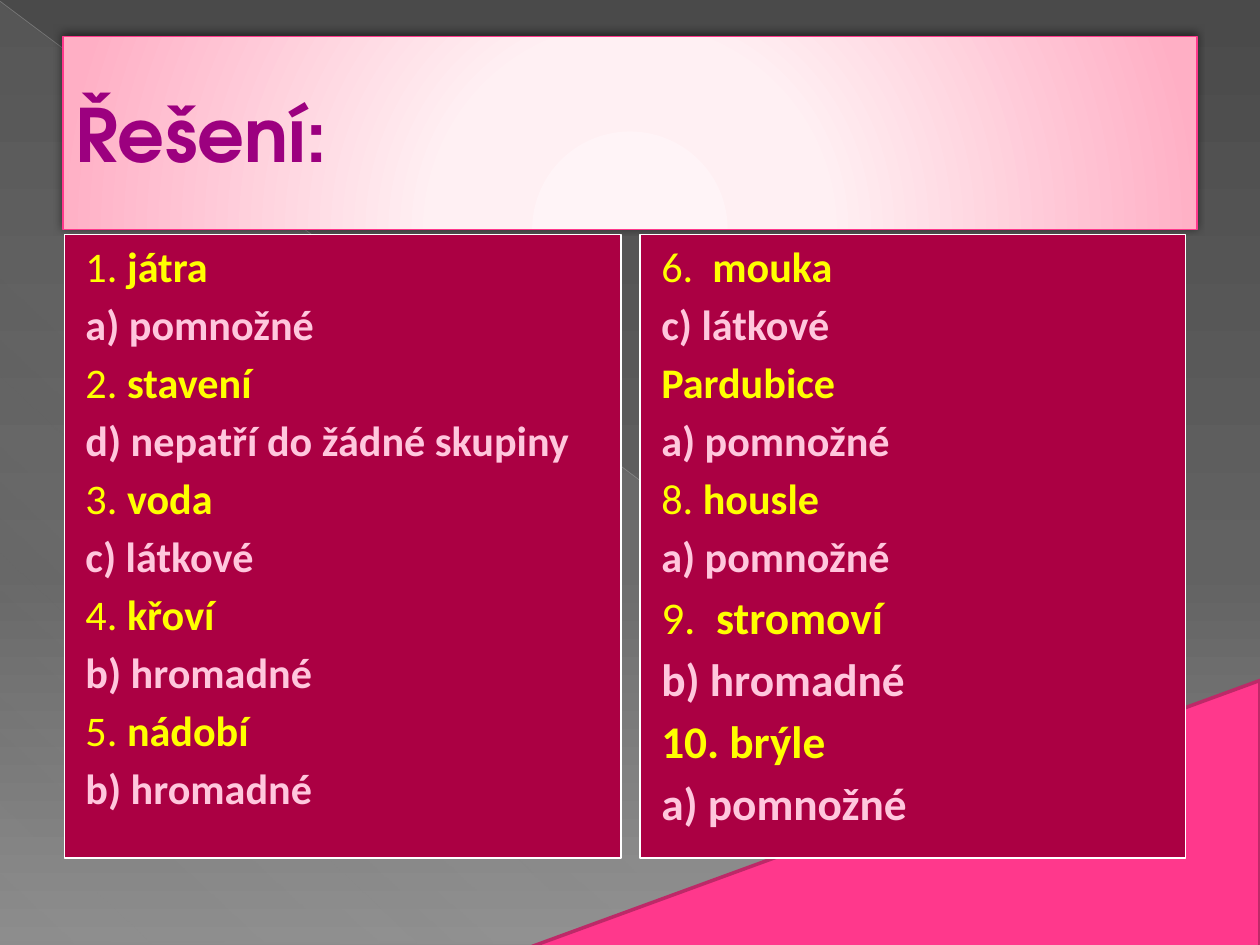
from lxml import etree
from pptx import Presentation
from pptx.dml.color import RGBColor
from pptx.enum.shapes import MSO_CONNECTOR, MSO_SHAPE
from pptx.enum.text import MSO_ANCHOR, PP_ALIGN
from pptx.oxml.ns import qn
from pptx.util import Inches, Pt

RECT, TRIANGLE = MSO_SHAPE.RECTANGLE, MSO_SHAPE.RIGHT_TRIANGLE
STRAIGHT = MSO_CONNECTOR.STRAIGHT
TOP, MIDDLE, LEFT = MSO_ANCHOR.TOP, MSO_ANCHOR.MIDDLE, PP_ALIGN.LEFT

COLORS = {
    "pink": "FF388C", "pink_edge": "BD2968", "panel": "AB0043", "white": "FFFFFF",
    "title": "9C007F", "word": "FFFF00", "answer": "FFC7DD", "ray": "BFBFBF",
    "sheen": "D2D2D2", "shadow": "000000",
}
BACKGROUND = [(0, "4A4A4A", 100), (60, "626262", 100), (100, "8C8C8C", 100)]
SHEEN = [(0, COLORS["sheen"], 10), (70, COLORS["sheen"], 8), (100, COLORS["sheen"], 1)]
TITLE_GLOW = [(0, "FFF4F7", 100), (34, "FFF0F3", 100), (100, "FFAFC5", 100)]
SMALL, LARGE = 24.1, 25.9

LEFT_ITEMS = [
    ("1. ", "játra", "a) pomnožné", SMALL),
    ("2. ", "stavení", "d) nepatří do žádné skupiny", SMALL),
    ("3. ", "voda", "c) látkové", SMALL),
    ("4. ", "křoví", "b) hromadné", SMALL),
    ("5. ", "nádobí", "b) hromadné", SMALL),
]
RIGHT_ITEMS = [
    ("6.", "  mouka", "c) látkové", SMALL),
    ("", "Pardubice", "a) pomnožné", SMALL),
    ("8. ", "housle", "a) pomnožné", SMALL),
    ("9.", "  stromoví", "b) hromadné", LARGE),
    ("", "10. brýle", "a) pomnožné", LARGE),
]


def rgb(name):
    """Return the named colour."""
    return RGBColor.from_string(COLORS[name])


def add_node(parent, tag, **attrs):
    """Append a DrawingML element with the given attributes."""
    node = etree.SubElement(parent, qn(f"a:{tag}"))
    for key, value in attrs.items():
        node.set(key, str(value))
    return node


def add_color(parent, color, alpha):
    """Append a colour with an opacity in percent."""
    node = add_node(parent, "srgbClr", val=color)
    if alpha < 100:
        add_node(node, "alpha", val=alpha * 1000)


def set_gradient(owner, fill, stops, angle=None, focus=None):
    """Fill with a linear gradient, or a circular one around a focus box."""
    fill.gradient()
    grad = owner.find(f".//{qn('a:gradFill')}")
    for child in list(grad):
        grad.remove(child)
    stop_list = add_node(grad, "gsLst")
    for pos, color, alpha in stops:
        add_color(add_node(stop_list, "gs", pos=pos * 1000), color, alpha)
    if focus:
        circle = add_node(grad, "path", path="circle")
        add_node(circle, "fillToRect", **{side: pct * 1000 for side, pct in zip("ltrb", focus)})
    else:
        add_node(grad, "lin", ang=angle * 60000, scaled=0)


def add_box(s, kind, box, fill=None, line=None, width=0.75):
    """Add a preset shape without shadow."""
    sp = s.shapes.add_shape(kind, *map(Inches, box))
    sp.shadow.inherit = False
    if fill:
        sp.fill.solid()
        sp.fill.fore_color.rgb = rgb(fill)
    if line:
        sp.line.color.rgb = rgb(line)
        sp.line.width = Pt(width)
    else:
        sp.line.fill.background()
    return sp


def add_run(p, text, color, **fmt):
    """Add a formatted run to a paragraph."""
    r = p.add_run()
    r.text = text
    r.font.color.rgb = rgb(color)
    for key, value in fmt.items():
        setattr(r.font, key, value)


def add_backdrop(s, box):
    """Draw the grey background, its diagonal sheen and the pink corner."""
    set_gradient(s.element, s.background.fill, BACKGROUND, angle=90)
    left, top, width, height = box
    sheen = add_box(s, TRIANGLE, box)
    set_gradient(sheen.element, sheen.fill, SHEEN, angle=133)
    ends = (left, top, left + width, top + height)
    ray = s.shapes.add_connector(STRAIGHT, *map(Inches, ends))
    ray.line.color.rgb = rgb("ray")
    ray.line.width = Pt(0.39)
    add_node(ray.line.color._xFill.find(qn("a:srgbClr")), "alpha", val=35000)
    add_node(ray.element.spPr, "effectLst")
    corner = add_box(s, TRIANGLE, (5.89, 3.49, 2.2, 6.02), "pink", "pink_edge", 2)
    corner.rotation = 270


def add_title(s, box, text):
    """Draw the glowing title bar with its shadow."""
    sp = add_box(s, RECT, box, line="pink")
    set_gradient(sp.element, sp.fill, TITLE_GLOW, focus=(50, 155, 50, -55))
    effects = sp.element.spPr.find(qn("a:effectLst"))
    shadow = add_node(effects, "outerShdw", blurRad=Pt(5), dist=Pt(2),
                      dir=245 * 60000, rotWithShape=0)
    add_color(shadow, COLORS["shadow"], 50)
    tf = sp.text_frame
    tf.word_wrap, tf.vertical_anchor = True, MIDDLE
    p = tf.paragraphs[0]
    p.alignment = LEFT
    add_run(p, text, "title", name="TeX Gyre Adventor", size=Pt(42), bold=True)


def add_answers(s, box, items):
    """Draw a panel with each word followed by its answer."""
    tf = add_box(s, RECT, box, "panel", "white").text_frame
    tf.word_wrap, tf.vertical_anchor = True, TOP
    lines = []
    for number, word, answer, size in items:
        lines += [(number, word, "word", size), ("", answer, "answer", size)]
    for i, (number, text, color, size) in enumerate(lines):
        p = tf.add_paragraph() if i else tf.paragraphs[0]
        p.alignment = LEFT
        p.space_before = Pt(round(size * 0.175, 1))
        pPr = p._p.get_or_add_pPr()
        pPr.set("marL", str(Inches(0.49)))
        pPr.set("indent", str(Inches(-0.42)))
        fmt = {"name": "Calibri", "size": Pt(size)}
        if number:
            add_run(p, number, color, bold=False, **fmt)
        add_run(p, text, color, bold=True, **fmt)


def main():
    """Build and save the slide."""
    prs = Presentation()
    prs.slide_width, prs.slide_height = Inches(10), Inches(7.5)
    s = prs.slides.add_slide(prs.slide_layouts[6])
    add_backdrop(s, (0, 0.01, 9.99, 7.48))
    add_title(s, (0.5, 0.29, 9, 1.53), "Řešení:")
    add_answers(s, (0.51, 1.86, 4.42, 4.95), LEFT_ITEMS)
    add_answers(s, (5.08, 1.86, 4.33, 4.95), RIGHT_ITEMS)
    prs.save("out.pptx")


if __name__ == "__main__":
    main()
